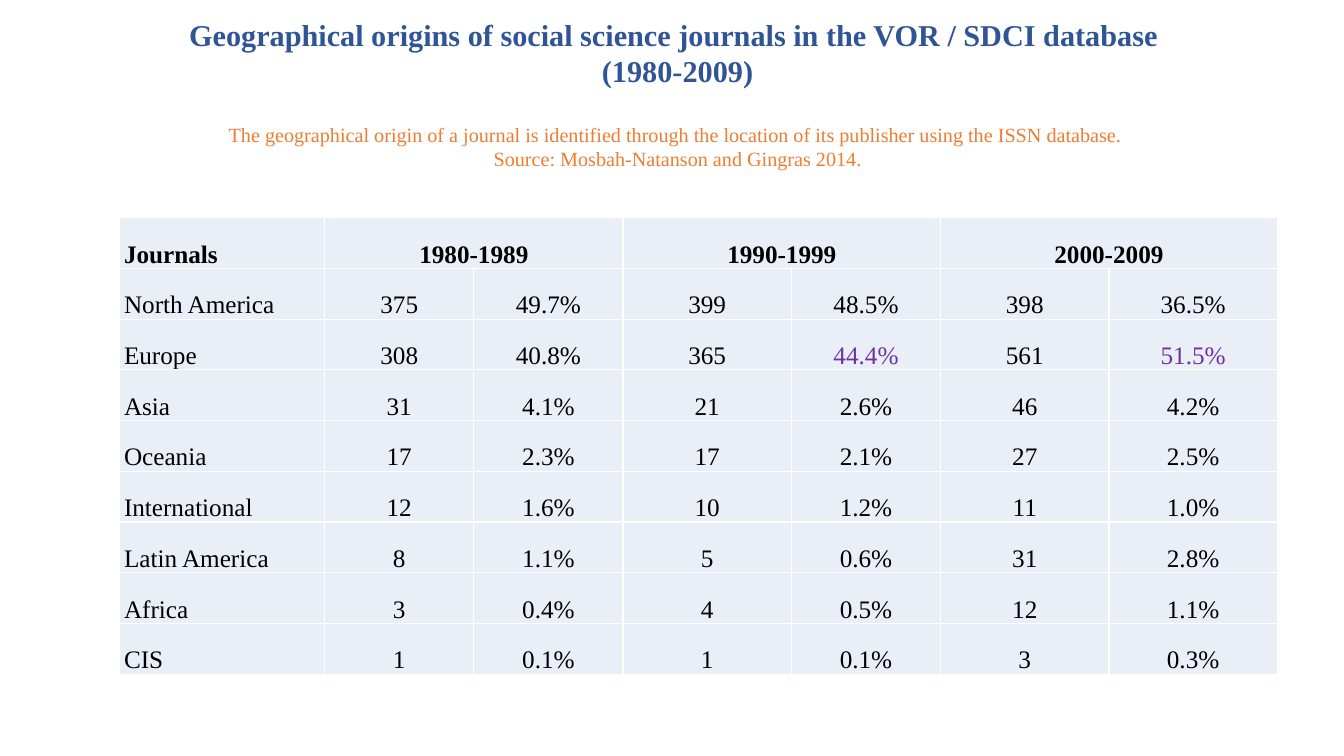
"""Build a slide with a table of the geographical origins of social science journals."""
from lxml.etree import SubElement
from pptx import Presentation
from pptx.dml.color import RGBColor
from pptx.enum.text import MSO_ANCHOR as Anchor, MSO_AUTO_SIZE as AutoSize, PP_ALIGN as Align
from pptx.oxml.ns import qn
from pptx.util import Inches, Pt

BLACK = RGBColor(0x00, 0x00, 0x00)
WHITE = RGBColor(0xFF, 0xFF, 0xFF)
BLUE = RGBColor(0x2F, 0x55, 0x97)
ORANGE = RGBColor(0xED, 0x7D, 0x31)
PURPLE = RGBColor(0x70, 0x30, 0xA0)
PALE_BLUE = RGBColor(0xEA, 0xEF, 0xF7)
FONT = "Times New Roman"

HEADING = ("Geographical origins of social science journals in the VOR / SDCI database ",
           "(1980-2009)")
SOURCE_NOTE = ("The geographical origin of a journal is identified through the location "
               "of its publisher using the ISSN database. ",
               "Source: Mosbah-Natanson and Gingras 2014.")
DECADES = ("1980-1989", "1990-1999", "2000-2009")
REGIONS = [
    ("North America", "375", "49.7%", "399", "48.5%", "398", "36.5%"),
    ("Europe", "308", "40.8%", "365", "44.4%", "561", "51.5%"),
    ("Asia", "31", "4.1%", "21", "2.6%", "46", "4.2%"),
    ("Oceania", "17", "2.3%", "17", "2.1%", "27", "2.5%"),
    ("International", "12", "1.6%", "10", "1.2%", "11", "1.0%"),
    ("Latin America", "8", "1.1%", "5", "0.6%", "31", "2.8%"),
    ("Africa", "3", "0.4%", "4", "0.5%", "12", "1.1%"),
    ("CIS", "1", "0.1%", "1", "0.1%", "3", "0.3%"),
]
HIGHLIGHTS = {"44.4%", "51.5%"}
COLUMN_WIDTHS = (2.04, 1.48, 1.48, 1.67, 1.48, 1.67, 1.67)

TITLE_BOX = {"left": Inches(0.97), "top": Inches(0.16),
             "width": Inches(11.5), "height": Inches(1.67)}
TITLE_FRAME = {"auto_size": AutoSize.NONE, "word_wrap": True,
               "vertical_anchor": Anchor.TOP, "margin_top": 0}
HEADING_FONT = {"name": FONT, "size": Pt(21.6), "bold": True}
NOTE_FONT = {"name": FONT, "size": Pt(14.4), "bold": False}
CELL_FONT = {"name": FONT, "size": Pt(18)}
CELL_FORMAT = {"vertical_anchor": Anchor.BOTTOM, "margin_left": Inches(0.05),
               "margin_right": Inches(0.05), "margin_top": 0, "margin_bottom": 0}


def apply(target, settings):
    """Set every attribute in settings on target."""
    for attribute, value in settings.items():
        setattr(target, attribute, value)


def write_title_part(paragraph, lines, font, color, spacing):
    """Write centred lines in one paragraph of the title."""
    paragraph.text = "\v".join(lines)
    apply(paragraph, {"alignment": Align.CENTER, **spacing})
    for run in paragraph.runs:
        apply(run.font, font)
        run.font.color.rgb = color


def add_borders(cell):
    """Give a cell thin white borders on all sides."""
    properties = cell._tc.get_or_add_tcPr()
    for position, side in enumerate(("lnL", "lnR", "lnT", "lnB")):
        border = SubElement(properties, qn(f"a:{side}"), w=str(Pt(1)))
        fill = SubElement(border, qn("a:solidFill"))
        SubElement(fill, qn("a:srgbClr"), val=str(WHITE))
        properties.insert(position, border)


def write_cell(cell, text, is_header, is_label):
    """Fill one table cell and format its text."""
    apply(cell, CELL_FORMAT)
    cell.fill.solid()
    cell.fill.fore_color.rgb = PALE_BLUE
    add_borders(cell)
    paragraph = cell.text_frame.paragraphs[0]
    apply(paragraph, {"alignment": Align.JUSTIFY if is_label else Align.CENTER,
                      "line_spacing": 1.15})
    if text:
        run = paragraph.add_run()
        run.text = text
        apply(run.font, {**CELL_FONT, "bold": is_header})
        run.font.color.rgb = PURPLE if text in HIGHLIGHTS else BLACK


def main():
    """Assemble and save the slide."""
    deck = Presentation()
    apply(deck, {"slide_width": Inches(13.33), "slide_height": Inches(7.5)})
    slide = deck.slides.add_slide(deck.slide_layouts[5])

    title = slide.shapes.title
    apply(title, TITLE_BOX)
    apply(title.text_frame, TITLE_FRAME)
    write_title_part(title.text_frame.paragraphs[0], HEADING, HEADING_FONT, BLUE,
                     {"line_spacing": Pt(25.7), "space_before": Pt(0)})
    write_title_part(title.text_frame.add_paragraph(), SOURCE_NOTE, NOTE_FONT, ORANGE,
                     {"line_spacing": Pt(17.1), "space_before": Pt(25)})

    header = ["Journals"]
    for decade in DECADES:
        header += [decade, ""]
    rows = [header, *REGIONS]
    journals = slide.shapes.add_table(len(rows), len(header), Inches(1.18), Inches(2.16),
                                      Inches(sum(COLUMN_WIDTHS)), Inches(4.53)).table
    for column, width in zip(journals.columns, COLUMN_WIDTHS):
        column.width = Inches(width)
    for row_number, row in enumerate(rows):
        for column_number, text in enumerate(row):
            write_cell(journals.cell(row_number, column_number), text,
                       row_number == 0, column_number == 0)
    for first in range(1, len(header), 2):
        journals.cell(0, first).merge(journals.cell(0, first + 1))

    deck.save("out.pptx")


if __name__ == "__main__":
    main()
